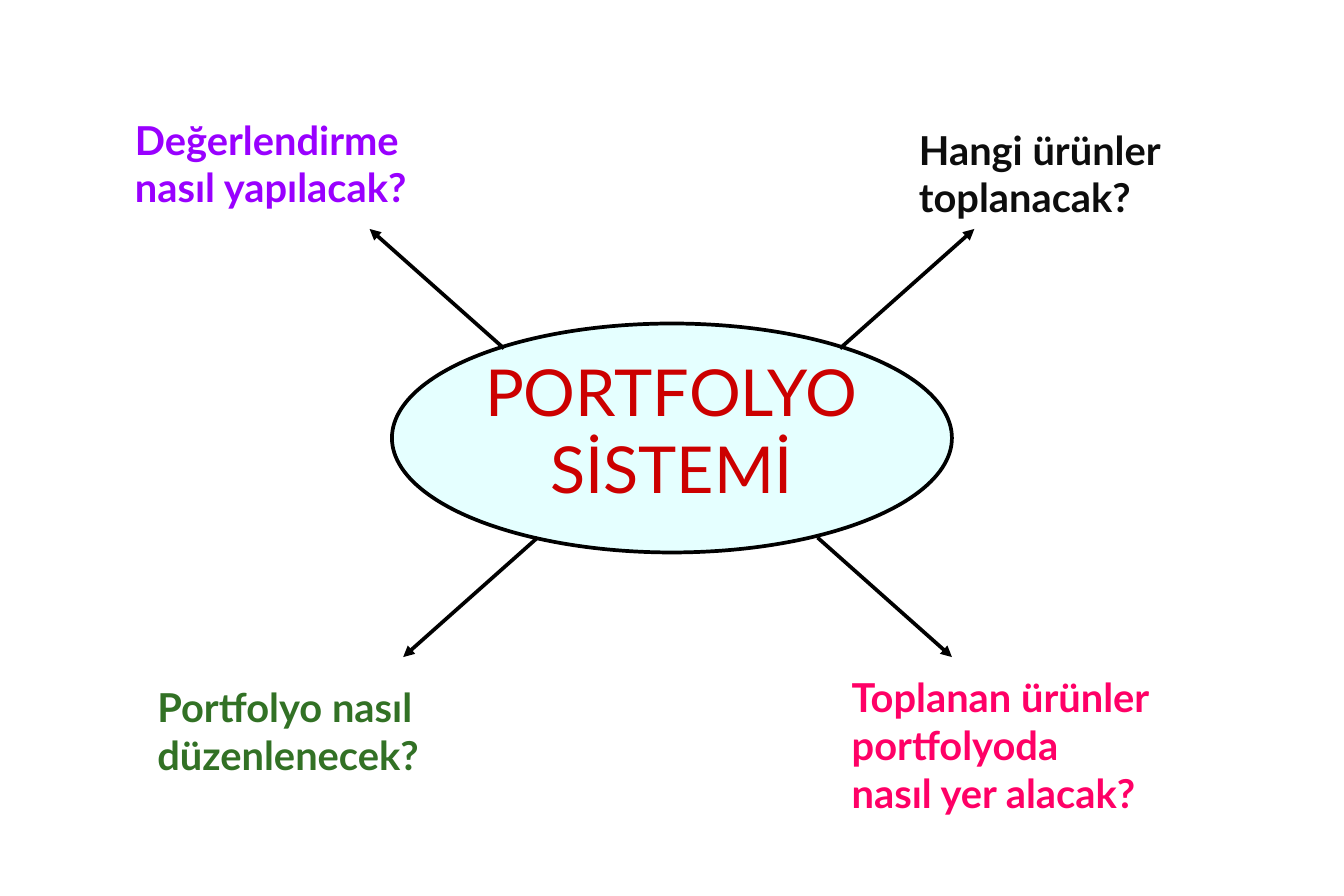
from dataclasses import dataclass

from lxml import etree
from pptx import Presentation
from pptx import util as u
from pptx.dml.color import RGBColor
from pptx.enum import shapes, text
from pptx.oxml import ns

PX = 9525


@dataclass(frozen=True)
class Theme:
    font: str = "Lato"
    title_size: int = 39
    note_size: int = 24
    line_width: float = 2.25
    line: str = "000000"
    oval: str = "CCFFFF"
    oval_alpha: int = 50000
    title: str = "CC0000"
    assessment: str = "9900FF"
    products: str = "0D0D0D"
    placement: str = "FF0066"
    layout: str = "327125"


THEME = Theme()


def px(*lengths):
    return [u.Emu(length * PX) for length in lengths]


def apply(target, values):
    for name, value in values.items():
        setattr(target, name, value)


def format_line(line):
    line.color.rgb = RGBColor.from_string(THEME.line)
    line.width = u.Pt(THEME.line_width)


def write(box, lines, color, frame_format, para_format, font_format):
    frame = box.text_frame
    apply(frame, {"word_wrap": True, **frame_format})
    for index, line in enumerate(lines):
        para = frame.add_paragraph() if index else frame.paragraphs[0]
        apply(para, para_format)
        span = para.add_run()
        span.text = line
        apply(span.font, {"name": THEME.font, **font_format})
        span.font.color.rgb = RGBColor.from_string(color)


def add_center(page, left, top, width, height):
    oval = page.shapes.add_shape(
        shapes.MSO_SHAPE.OVAL, *px(left, top, width, height))
    oval.shadow.inherit = False
    oval.fill.solid()
    oval.fill.fore_color.rgb = RGBColor.from_string(THEME.oval)
    color = oval._element.spPr.find(".//" + ns.qn("a:srgbClr"))
    etree.SubElement(color, ns.qn("a:alpha"), val=str(THEME.oval_alpha))
    format_line(oval.line)

    title = page.shapes.title
    title._element.addprevious(oval._element)
    places = px(left - 32, top + 32, 513, 120)
    apply(title, dict(zip(("left", "top", "width", "height"), places)))
    write(title, ["PORTFOLYO SİSTEMİ"], THEME.title,
          {"vertical_anchor": text.MSO_ANCHOR.BOTTOM,
           "auto_size": text.MSO_AUTO_SIZE.NONE},
          {"alignment": text.PP_ALIGN.CENTER},
          {"size": u.Pt(THEME.title_size), "bold": False})


def add_note(page, left, top, width, height, lines, color):
    box = page.shapes.add_textbox(*px(left, top, width, height))
    write(box, lines, color,
          {"auto_size": text.MSO_AUTO_SIZE.SHAPE_TO_FIT_TEXT},
          {"alignment": text.PP_ALIGN.LEFT},
          {"size": u.Pt(THEME.note_size), "bold": True})


def add_arrow(page, x, y, right, down):
    arrow = page.shapes.add_connector(
        shapes.MSO_CONNECTOR.STRAIGHT,
        *px(x, y, x + right * 108, y + down * 96))
    format_line(arrow.line)
    etree.SubElement(arrow.line._get_or_add_ln(), ns.qn("a:tailEnd"),
                     type="triangle")
    etree.SubElement(arrow._element.spPr, ns.qn("a:effectLst"))


def build_map(page):
    add_center(page, 315, 260, 450, 184)
    notes = [
        (99, 88, 305, 87,
         ["Değerlendirme", "nasıl yapılacak?"], THEME.assessment),
        (729, 96, 252, 87,
         ["Hangi ürünler", "toplanacak?"], THEME.products),
        (675, 536, 306, 126,
         ["Toplanan ürünler portfolyoda", "nasıl yer alacak?"],
         THEME.placement),
        (117, 544, 264, 87,
         ["Portfolyo nasıl", "düzenlenecek?"], THEME.layout),
    ]
    for note in notes:
        add_note(page, *note)
    arrows = [(675, 280, 1, -1), (405, 280, -1, -1),
              (657, 432, 1, 1), (432, 432, -1, 1)]
    for arrow in arrows:
        add_arrow(page, *arrow)


def main():
    deck = Presentation()
    deck.slide_width, deck.slide_height = px(1080, 720)
    page = deck.slides.add_slide(deck.slide_layouts[5])
    build_map(page)
    deck.save("out.pptx")


if __name__ == "__main__":
    main()
